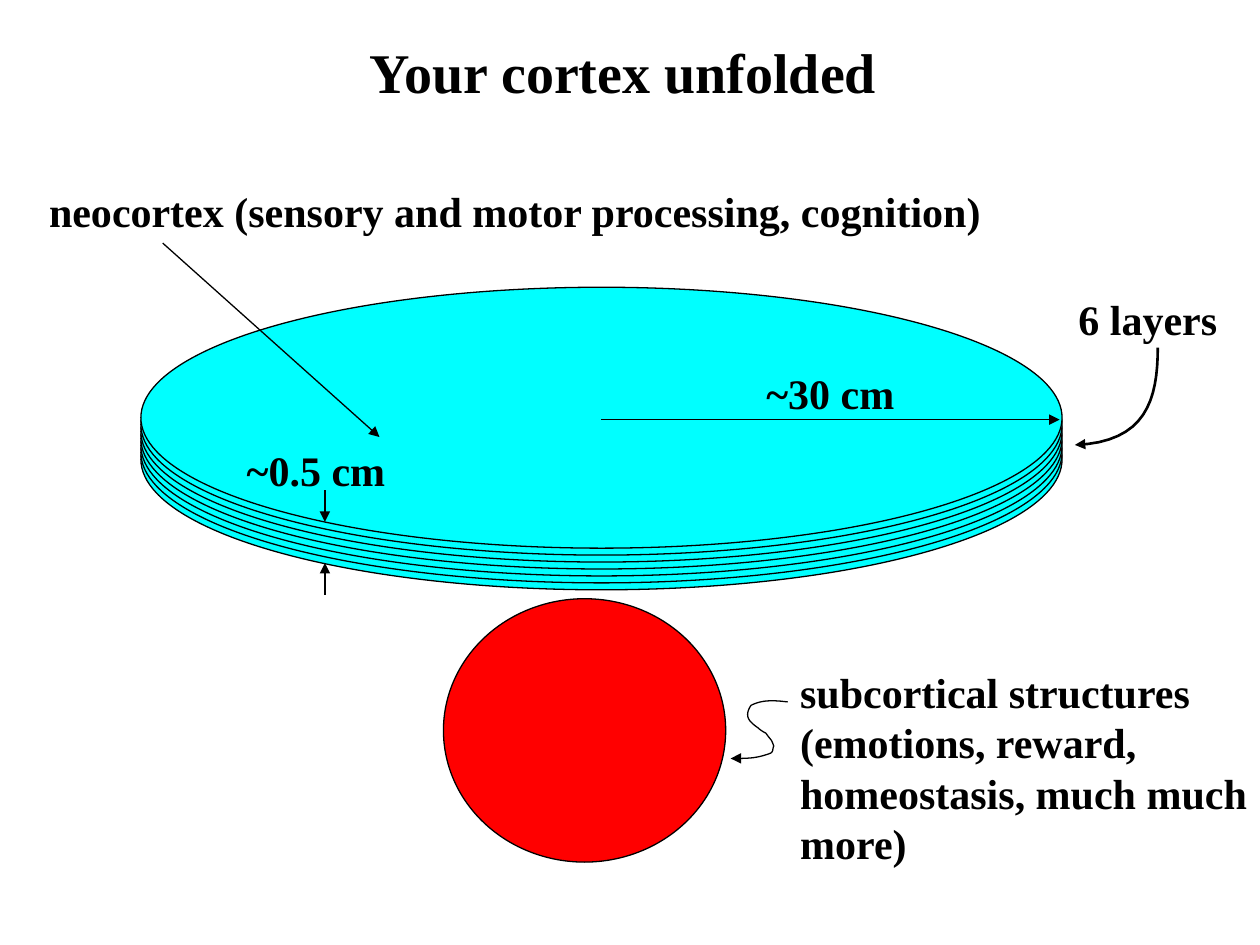
from typing import NamedTuple

from lxml import etree
from pptx import Presentation
from pptx.dml.color import RGBColor
from pptx.enum import shapes, text
from pptx.oxml import ns
from pptx.util import Cm, Pt

HUES = {"ink": "000000", "cortex": "00FFFF", "core": "FF0000"}
FONT = "Times New Roman"


class Disc(NamedTuple):
    left: float
    top: float
    width: float
    height: float
    hue: str
    turn: int = 0


class Label(NamedTuple):
    words: str
    left: float
    top: float
    width: float
    height: float
    size: int = 24
    align: text.PP_ALIGN = text.PP_ALIGN.LEFT


class Arrow(NamedTuple):
    x: float
    y: float
    endx: float
    endy: float


class Curve(NamedTuple):
    start: tuple
    bends: list
    weight: float = 0.75


MID = text.PP_ALIGN.CENTER
LAYERS = 7
STEP = 0.14
DISCS = [
    Disc(2.84, 5.79 + STEP * i, 18.57, 5.26, "cortex", 180)
    for i in reversed(range(LAYERS))
] + [Disc(8.94, 12.07, 5.69, 5.31, "core")]

LABELS = [
    Label("Your cortex unfolded", 7.14, 0.64, 10.85, 1.6, 32, MID),
    Label("~30 cm", 15.19, 7.29, 3.1, 1.27, align=MID),
    Label("~0.5 cm", 4.72, 8.84, 3.3, 1.27, align=MID),
    Label("neocortex (sensory and motor processing, cognition)",
          0.74, 3.61, 19.48, 1.3),
    Label("subcortical structures\n(emotions, reward,\n"
          "homeostasis, much much\nmore)", 15.88, 13.31, 9.53, 4.32),
    Label("6 layers", 21.49, 5.79, 3.3, 1.27),
]

ARROWS = [
    Arrow(12.12, 8.46, 21.36, 8.46),
    Arrow(6.55, 9.88, 6.55, 10.52),
    Arrow(6.55, 11.99, 6.55, 11.35),
    Arrow(3.28, 4.9, 7.65, 8.81),
]

CURVES = [
    Curve((23.34, 7.01), [((23.34, 8.05), (23.11, 8.92), (21.67, 8.97))], 1.5),
    Curve((15.88, 14.15), [
        ((15.62, 14.12), (15.37, 14.1), (15.14, 14.22)),
        ((14.99, 14.45), (15.11, 14.55), (15.29, 14.68)),
        ((15.34, 14.73), (15.44, 14.78), (15.44, 14.78)),
        ((15.57, 14.96), (15.54, 14.88), (15.6, 15.04)),
        ((15.57, 15.09), (15.6, 15.16), (15.52, 15.19)),
        ((15.24, 15.29), (15.09, 15.29), (14.73, 15.29)),
    ]),
]


def shade(name: str) -> RGBColor:
    return RGBColor.from_string(HUES[name])


def ink(line, weight: float = 0.75) -> None:
    line.color.rgb = shade("ink")
    line.width = Pt(weight)


def tip(line) -> None:
    etree.SubElement(line._get_or_add_ln(), ns.qn("a:tailEnd"), type="triangle")


def draw_disc(slide, disc: Disc) -> None:
    oval = slide.shapes.add_shape(
        shapes.MSO_SHAPE.OVAL, Cm(disc.left), Cm(disc.top),
        Cm(disc.width), Cm(disc.height))
    oval.shadow.inherit = False
    oval.rotation = disc.turn
    oval.fill.solid()
    oval.fill.fore_color.rgb = shade(disc.hue)
    ink(oval.line)


def draw_label(slide, label: Label) -> None:
    box = slide.shapes.add_textbox(
        Cm(label.left), Cm(label.top), Cm(label.width), Cm(label.height))
    frame = box.text_frame
    frame.text = label.words
    frame.word_wrap = False
    frame.auto_size = text.MSO_AUTO_SIZE.SHAPE_TO_FIT_TEXT
    for para in frame.paragraphs:
        para.alignment = label.align
        for run in para.runs:
            run.font.name = FONT
            run.font.size = Pt(label.size)
            run.font.bold = True
            run.font.color.rgb = shade("ink")


def draw_arrow(slide, arrow: Arrow) -> None:
    link = slide.shapes.add_connector(
        shapes.MSO_CONNECTOR.STRAIGHT, Cm(arrow.x), Cm(arrow.y),
        Cm(arrow.endx), Cm(arrow.endy))
    ink(link.line)
    tip(link.line)
    etree.SubElement(link._element.spPr, ns.qn("a:effectLst"))


def trace(curve: Curve, count: int = 16) -> list:
    points = []
    start = curve.start
    for one, two, end in curve.bends:
        for i in range(1, count + 1):
            t = i / count
            s = 1 - t
            points.append(tuple(
                Cm(s**3 * a + 3 * s * s * t * b + 3 * s * t * t * c + t**3 * d)
                for a, b, c, d in zip(start, one, two, end)))
        start = end
    return points


def draw_curve(slide, curve: Curve) -> None:
    x, y = curve.start
    pen = slide.shapes.build_freeform(Cm(x), Cm(y))
    pen.add_line_segments(trace(curve), close=False)
    shape = pen.convert_to_shape()
    shape.shadow.inherit = False
    shape.fill.background()
    ink(shape.line, curve.weight)
    tip(shape.line)


def main() -> None:
    deck = Presentation()
    deck.slide_width, deck.slide_height = Cm(25.4), Cm(19.05)
    slide = deck.slides.add_slide(deck.slide_layouts[6])
    for draw, items in (
        (draw_disc, DISCS),
        (draw_arrow, ARROWS),
        (draw_label, LABELS),
        (draw_curve, CURVES),
    ):
        for item in items:
            draw(slide, item)
    deck.save("out.pptx")


if __name__ == "__main__":
    main()
